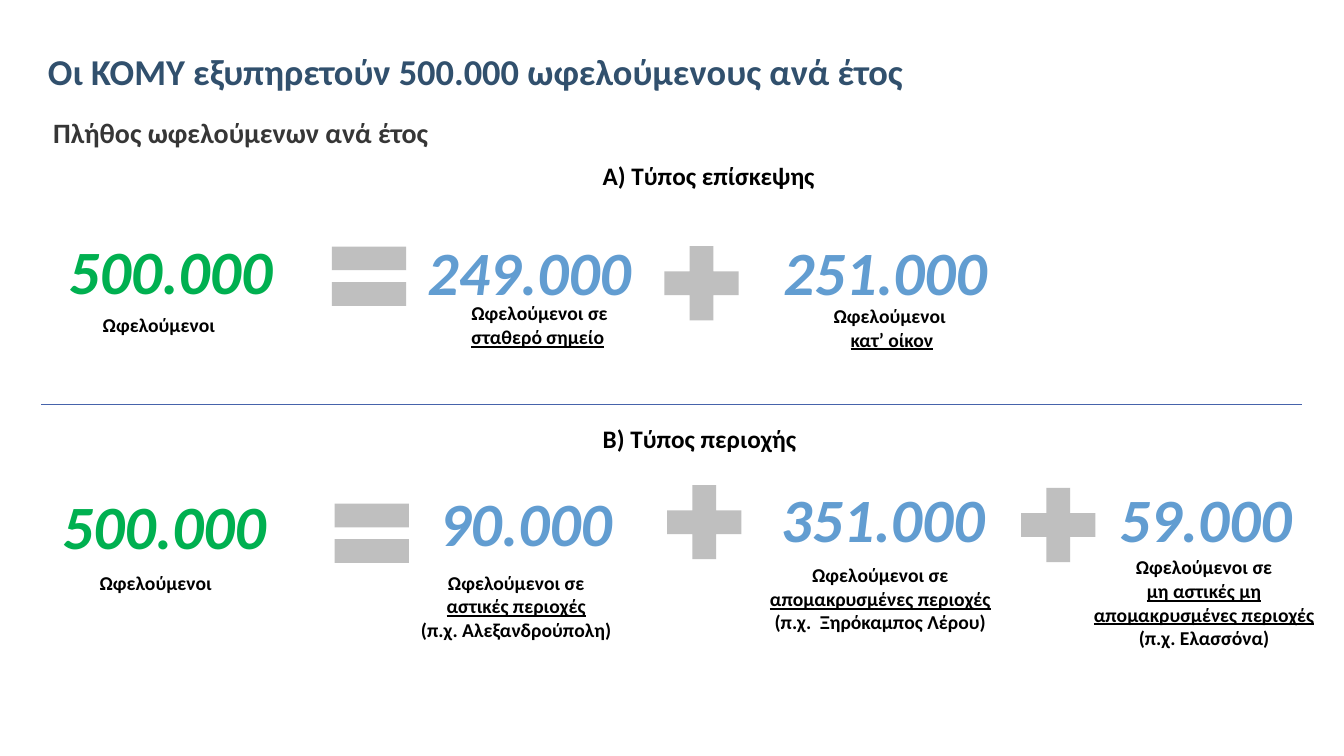
"""Build the slide that splits yearly beneficiaries by visit type and by area type."""
from dataclasses import dataclass

from lxml import etree
from pptx import Presentation
from pptx import util as u
from pptx.dml.color import RGBColor
from pptx.enum import shapes, text
from pptx.oxml.ns import qn

COLORS = {"title": "31506D", "subtitle": "363636", "total": "00B050", "part": "629DD1",
          "label": "000000", "heading": "000000", "sign": "BFBFBF", "divider": "4663AB"}
FORMATS = {
    "title": {"size": u.Pt(26), "bold": True},
    "subtitle": {"size": u.Pt(20), "bold": True},
    "heading": {"size": u.Pt(18), "bold": True},
    "total": {"size": u.Pt(44), "bold": True, "italic": True},
    "part": {"size": u.Pt(44), "bold": True, "italic": True},
    "label": {"size": u.Pt(14), "bold": True},
}
LEFT, CENTER, RIGHT = text.PP_ALIGN.LEFT, text.PP_ALIGN.CENTER, text.PP_ALIGN.RIGHT
EQUAL, PLUS = shapes.MSO_SHAPE.MATH_EQUAL, shapes.MSO_SHAPE.MATH_PLUS
SIGN_SIZE = 2.54


@dataclass
class Span:
    words: str
    underline: bool = False


@dataclass
class Caption:
    style: str
    left: float
    top: float
    width: float
    height: float
    paras: list[list[Span]]
    align: text.PP_ALIGN = LEFT


@dataclass
class Sign:
    kind: shapes.MSO_SHAPE
    left: float
    top: float


def single(words: str) -> list[list[Span]]:
    return [[Span(words)]]


def figure(style: str, left: float, top: float, width: float, words: str) -> Caption:
    return Caption(style, left, top, width, 2.13, single(words), RIGHT)


def heading(top: float, words: str) -> Caption:
    return Caption("heading", 14.94, top, 6.27, 1.02, single(words))


def total_label(left: float, top: float) -> Caption:
    return Caption("label", left, top, 5.54, 0.86, single("Ωφελούμενοι"))


HEADERS = [
    Caption("title", 0.91, 0.64, 31.5, 1.83,
            single("Οι ΚΟΜΥ εξυπηρετούν 500.000 ωφελούμενους ανά έτος")),
    Caption("subtitle", 1.04, 2.82, 31.52, 1.02, single("Πλήθος ωφελούμενων ανά έτος")),
]
CAPTIONS = [
    heading(3.91, "Α) Τύπος επίσκεψης"),
    figure("total", 0.41, 5.74, 6.71, "500.000"),
    total_label(2.34, 7.77),
    figure("part", 9.45, 5.77, 6.71, "249.000"),
    Caption("label", 11.63, 7.47, 5.54, 1.45,
            [[Span("Ωφελούμενοι σε "), Span("σταθερό σημείο", True)]]),
    figure("part", 18.75, 5.77, 6.38, "251.000"),
    Caption("label", 19.71, 7.54, 5.54, 1.45,
            [[Span("Ωφελούμενοι ")], [Span("κατ’ οίκον", True)]], CENTER),
    heading(10.54, "Β) Τύπος περιοχής"),
    figure("total", 0.25, 12.17, 6.71, "500.000"),
    total_label(2.26, 14.27),
    figure("part", 8.97, 12.09, 6.71, "90.000"),
    Caption("label", 10.24, 14.25, 5.54, 2.06,
            [[Span("Ωφελούμενοι σε "), Span("αστικές περιοχές", True)],
             [Span("(π.χ. Αλεξανδρούπολη)")]], CENTER),
    figure("part", 18.69, 11.99, 6.38, "351.000"),
    Caption("label", 18.69, 14.07, 6.99, 2.06,
            [[Span("Ωφελούμενοι σε "), Span("απομακρυσμένες περιοχές", True)],
             [Span("(π.χ.  Ξηρόκαμπος Λέρου)")]], CENTER),
    figure("part", 27.43, 11.99, 5.38, "59.000"),
    Caption("label", 26.8, 13.87, 7.09, 2.64,
            [[Span("Ωφελούμενοι σε")],
             [Span("μη αστικές μη απομακρυσμένες περιοχές", True)],
             [Span("(π.χ. Ελασσόνα)")]], CENTER),
]
SIGNS = [Sign(EQUAL, 8.03, 5.69), Sign(PLUS, 16.41, 5.87),
         Sign(EQUAL, 8.1, 12.17), Sign(PLUS, 16.48, 11.89), Sign(PLUS, 25.4, 11.96)]


def draw_caption(page, caption: Caption, frame_format: dict):
    box = page.shapes.add_textbox(u.Cm(caption.left), u.Cm(caption.top),
                                  u.Cm(caption.width), u.Cm(caption.height))
    frame = box.text_frame
    for name, value in frame_format.items():
        setattr(frame, name, value)
    for index, spans in enumerate(caption.paras):
        para = frame.add_paragraph() if index else frame.paragraphs[0]
        para.alignment = caption.align
        for span in spans:
            run = para.add_run()
            run.text = span.words
            look = {"name": "Calibri", "underline": span.underline, **FORMATS[caption.style]}
            for name, value in look.items():
                setattr(run.font, name, value)
            run.font.color.rgb = RGBColor.from_string(COLORS[caption.style])
    return box


def draw_sign(page, sign: Sign) -> None:
    shape = page.shapes.add_shape(sign.kind, u.Cm(sign.left), u.Cm(sign.top),
                                  u.Cm(SIGN_SIZE), u.Cm(SIGN_SIZE))
    shape.shadow.inherit = False
    shape.fill.solid()
    shape.fill.fore_color.rgb = RGBColor.from_string(COLORS["sign"])
    shape.line.fill.background()


def draw_divider(page) -> None:
    divider = page.shapes.add_connector(shapes.MSO_CONNECTOR.STRAIGHT, u.Cm(1.04), u.Cm(10.19),
                                        u.Cm(32.82), u.Cm(10.19))
    divider.line.color.rgb = RGBColor.from_string(COLORS["divider"])
    divider.line.width = u.Pt(0.75)
    etree.SubElement(divider.element.spPr, qn("a:effectLst"))


def main() -> None:
    deck = Presentation()
    deck.slide_width, deck.slide_height = u.Cm(33.87), u.Cm(19.05)
    page = deck.slides.add_slide(deck.slide_layouts[6])
    anchors = {"title": text.MSO_ANCHOR.BOTTOM, "subtitle": text.MSO_ANCHOR.MIDDLE}
    for header in HEADERS:
        box = draw_caption(page, header, {"word_wrap": True, "margin_left": u.Cm(0.3),
                                          "vertical_anchor": anchors[header.style]})
        if header.style == "title":
            box.text_frame.paragraphs[0].line_spacing = 0.9
    for caption in CAPTIONS:
        draw_caption(page, caption, {"word_wrap": True,
                                     "auto_size": text.MSO_AUTO_SIZE.SHAPE_TO_FIT_TEXT})
    draw_divider(page)
    for sign in SIGNS:
        draw_sign(page, sign)
    deck.save("out.pptx")


if __name__ == "__main__":
    main()
